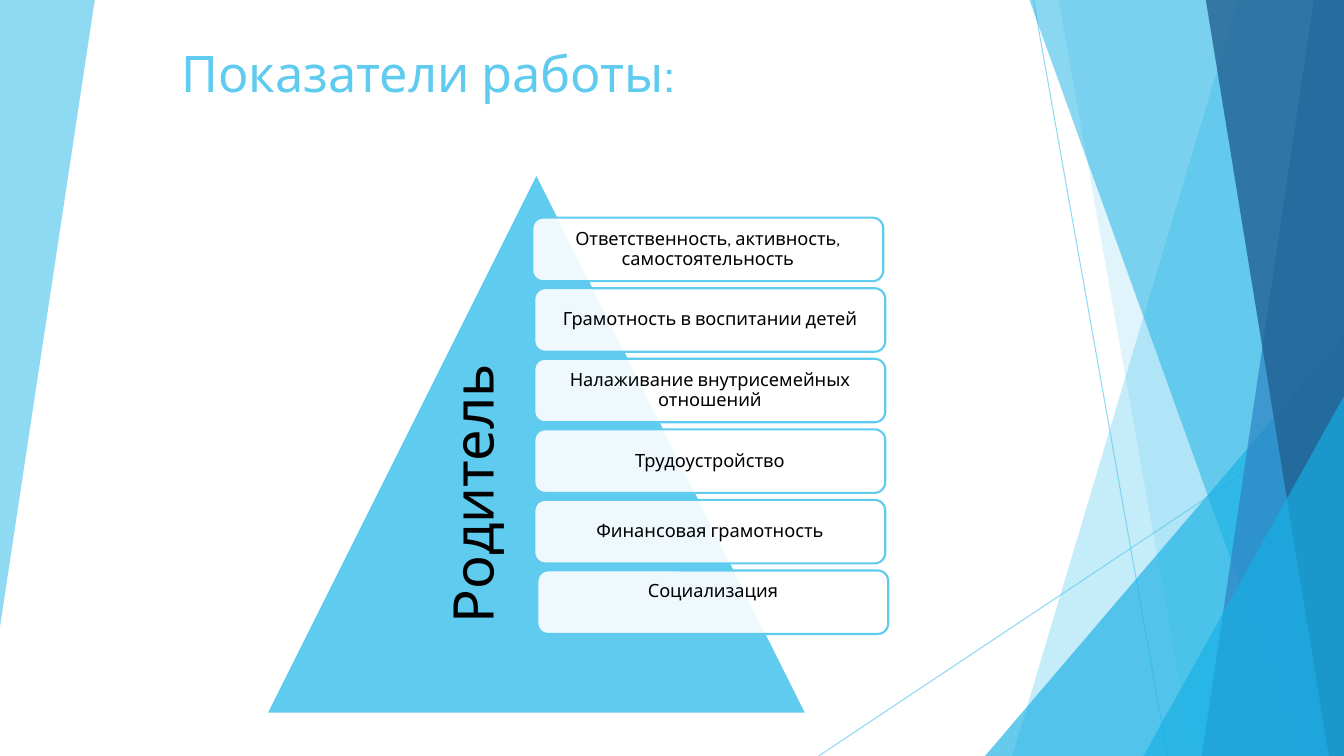
"""Build the slide with the pyramid of indicators for work with parents."""
from dataclasses import dataclass

from lxml.etree import SubElement
from pptx import Presentation
from pptx.dml.color import RGBColor
from pptx.enum.shapes import MSO_CONNECTOR, MSO_SHAPE
from pptx.enum.text import MSO_ANCHOR, PP_ALIGN
from pptx.oxml.ns import qn
from pptx.shapes.autoshape import Shape
from pptx.slide import Slide
from pptx.util import Inches, Pt


@dataclass(frozen=True)
class Theme:
    """Colours, font and type sizes of the slide."""
    sky: str = "5FCBEF"
    cyan: str = "17B0E4"
    blue: str = "2E83C3"
    navy: str = "226292"
    white: str = "FFFFFF"
    black: str = "000000"
    font: str = "Cabin"
    title_size: float = 36
    axis_size: float = 40
    bar_size: float = 13


@dataclass(frozen=True)
class Facet:
    """A slanted panel from its left edge to the right side of the slide."""
    top_left: float
    bottom_left: float
    bottom_right: float
    color: str
    opacity: int


@dataclass(frozen=True)
class Corner:
    """A right triangle in the bottom right corner of the slide."""
    left: float
    top: float
    color: str
    opacity: int


@dataclass(frozen=True)
class Bar:
    """A rounded box with one indicator."""
    text: str
    left: float = 5.3
    anchor: MSO_ANCHOR = MSO_ANCHOR.MIDDLE


THEME = Theme()
WIDTH, HEIGHT = 13.33, 7.5
BAR_TOP, BAR_PITCH, BAR_WIDTH, BAR_HEIGHT = 2.16, 0.7, 3.48, 0.63
RAYS = [((10.25, 0), (11.58, HEIGHT)), ((WIDTH, 4.03), (8.12, HEIGHT))]
DECORATION = [
    Facet(12.28, 10.04, WIDTH, THEME.sky, 36),
    Facet(10.5, 11.83, WIDTH, THEME.sky, 20),
    Corner(9.77, 3.33, THEME.cyan, 66),
    Facet(10.21, 12.91, WIDTH, THEME.cyan, 50),
    Facet(13.03, 11.92, WIDTH, THEME.blue, 70),
    Facet(11.96, 13.18, WIDTH, THEME.navy, 80),
    Corner(11.34, 3.93, THEME.cyan, 66),
]
BARS = [
    Bar("Ответственность, активность, самостоятельность", left=5.28),
    Bar("Грамотность в воспитании детей"),
    Bar("Налаживание внутрисемейных отношений"),
    Bar("Трудоустройство"),
    Bar("Финансовая грамотность"),
    Bar("Социализация", left=5.33, anchor=MSO_ANCHOR.TOP),
]


def set_opacity(holder, opacity: int) -> None:
    """Set the opacity in percent of the colour inside an element."""
    color = next(holder.iter(qn("a:srgbClr")))
    SubElement(color, qn("a:alpha")).set("val", str(opacity * 1000))


def paint(shape: Shape, color: str, opacity: int = 100, outline: str = "") -> None:
    """Fill a shape and give it an outline if a colour is named."""
    shape.shadow.inherit = False
    shape.fill.solid()
    shape.fill.fore_color.rgb = RGBColor.from_string(color)
    if opacity < 100:
        set_opacity(shape.fill._xPr, opacity)
    if outline:
        shape.line.color.rgb = RGBColor.from_string(outline)
        shape.line.width = Pt(1.5)
    else:
        shape.line.fill.background()


def write(shape: Shape, text: str, *, size: float, color: str,
          align: PP_ALIGN = PP_ALIGN.LEFT, anchor: MSO_ANCHOR = MSO_ANCHOR.TOP,
          inset: float | None = None, spacing: float = 1.0) -> None:
    """Write formatted text into a shape."""
    frame = shape.text_frame
    frame.word_wrap = True
    frame.vertical_anchor = anchor
    if inset is not None:
        frame.margin_left = frame.margin_right = Inches(inset)
        frame.margin_top = frame.margin_bottom = Inches(inset)
    paragraph = frame.paragraphs[0]
    paragraph.alignment = align
    paragraph.line_spacing = spacing
    run = paragraph.add_run()
    run.text = text
    run.font.name = THEME.font
    run.font.size = Pt(size)
    run.font.color.rgb = RGBColor.from_string(color)


def add_preset(slide: Slide, kind: MSO_SHAPE, left: float, top: float,
               width: float, height: float) -> Shape:
    """Add a preset shape measured in inches."""
    return slide.shapes.add_shape(
        kind, Inches(left), Inches(top), Inches(width), Inches(height))


def add_text_box(slide: Slide, left: float, top: float,
                 width: float, height: float) -> Shape:
    """Add a text box measured in inches."""
    return slide.shapes.add_textbox(
        Inches(left), Inches(top), Inches(width), Inches(height))


def add_polygon(slide: Slide, points: list[tuple[float, float]]) -> Shape:
    """Add a closed outline through points in inches."""
    start, *others = [(Inches(x), Inches(y)) for x, y in points]
    builder = slide.shapes.build_freeform(*start)
    builder.add_line_segments(others, close=True)
    return builder.convert_to_shape()


def add_ray(slide: Slide, start: tuple[float, float], end: tuple[float, float]) -> None:
    """Add a thin translucent line."""
    ray = slide.shapes.add_connector(
        MSO_CONNECTOR.STRAIGHT, *map(Inches, start), *map(Inches, end))
    ray.line.color.rgb = RGBColor.from_string(THEME.sky)
    ray.line.width = Pt(0.75)
    properties = ray._element.spPr
    set_opacity(properties, 70)
    SubElement(properties, qn("a:effectLst"))


def add_decoration(slide: Slide, item: Facet | Corner) -> None:
    """Add one panel of the background on the right."""
    if isinstance(item, Corner):
        panel = add_preset(slide, MSO_SHAPE.ISOSCELES_TRIANGLE, item.left, item.top,
                           WIDTH - item.left, HEIGHT - item.top)
        panel.adjustments[0] = 1.0
    else:
        panel = add_polygon(slide, [(item.top_left, 0), (WIDTH, 0),
                                    (item.bottom_right, HEIGHT),
                                    (item.bottom_left, HEIGHT)])
    paint(panel, item.color, item.opacity)


def add_bar(slide: Slide, bar: Bar, top: float) -> None:
    """Add one indicator on the pyramid."""
    shape = add_preset(slide, MSO_SHAPE.ROUNDED_RECTANGLE, bar.left, top,
                       BAR_WIDTH, BAR_HEIGHT)
    paint(shape, THEME.white, 90, outline=THEME.sky)
    write(shape, bar.text, size=THEME.bar_size, color=THEME.black, spacing=0.9,
          align=PP_ALIGN.CENTER, anchor=bar.anchor, inset=0.08)


def main() -> None:
    """Build and save the presentation."""
    presentation = Presentation()
    presentation.slide_width = Inches(WIDTH)
    presentation.slide_height = Inches(HEIGHT)
    slide = presentation.slides.add_slide(presentation.slide_layouts[6])

    paint(add_polygon(slide, [(0, 0), (0.94, 0), (0, 6.22)]), THEME.sky, 70)
    for start, end in RAYS:
        add_ray(slide, start, end)
    for item in DECORATION:
        add_decoration(slide, item)

    title = add_text_box(slide, 1.7, 0.37, 9.4, 0.85)
    write(title, "Показатели работы:", size=THEME.title_size, color=THEME.sky)
    pyramid = add_preset(slide, MSO_SHAPE.ISOSCELES_TRIANGLE, 2.64, 1.72, 5.36, 5.36)
    paint(pyramid, THEME.sky, outline=THEME.white)
    for index, bar in enumerate(BARS):
        add_bar(slide, bar, BAR_TOP + index * BAR_PITCH)
    axis = add_text_box(slide, 4.29, 3.42, 0.88, 2.86)
    write(axis, "Родитель", size=THEME.axis_size, color=THEME.black)
    axis.text_frame._txBody.bodyPr.set("vert", "vert270")
    presentation.save("out.pptx")


if __name__ == "__main__":
    main()
